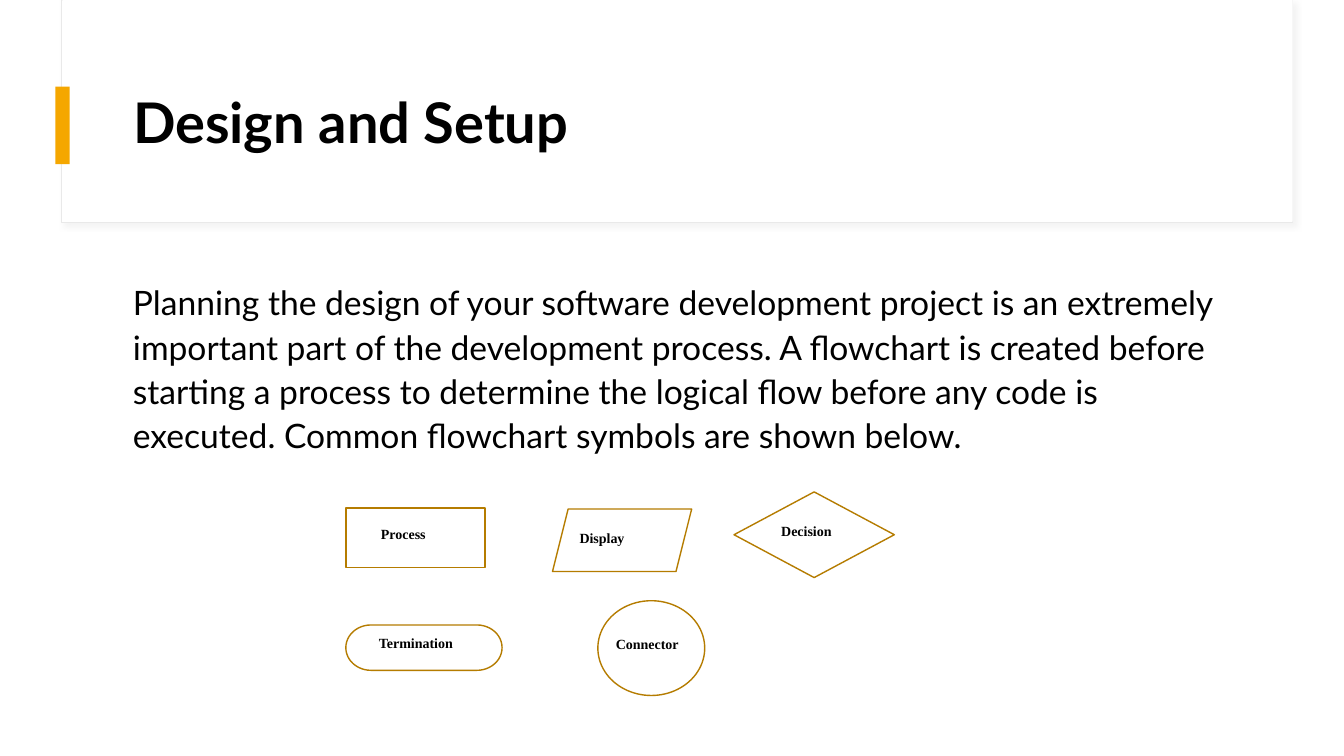
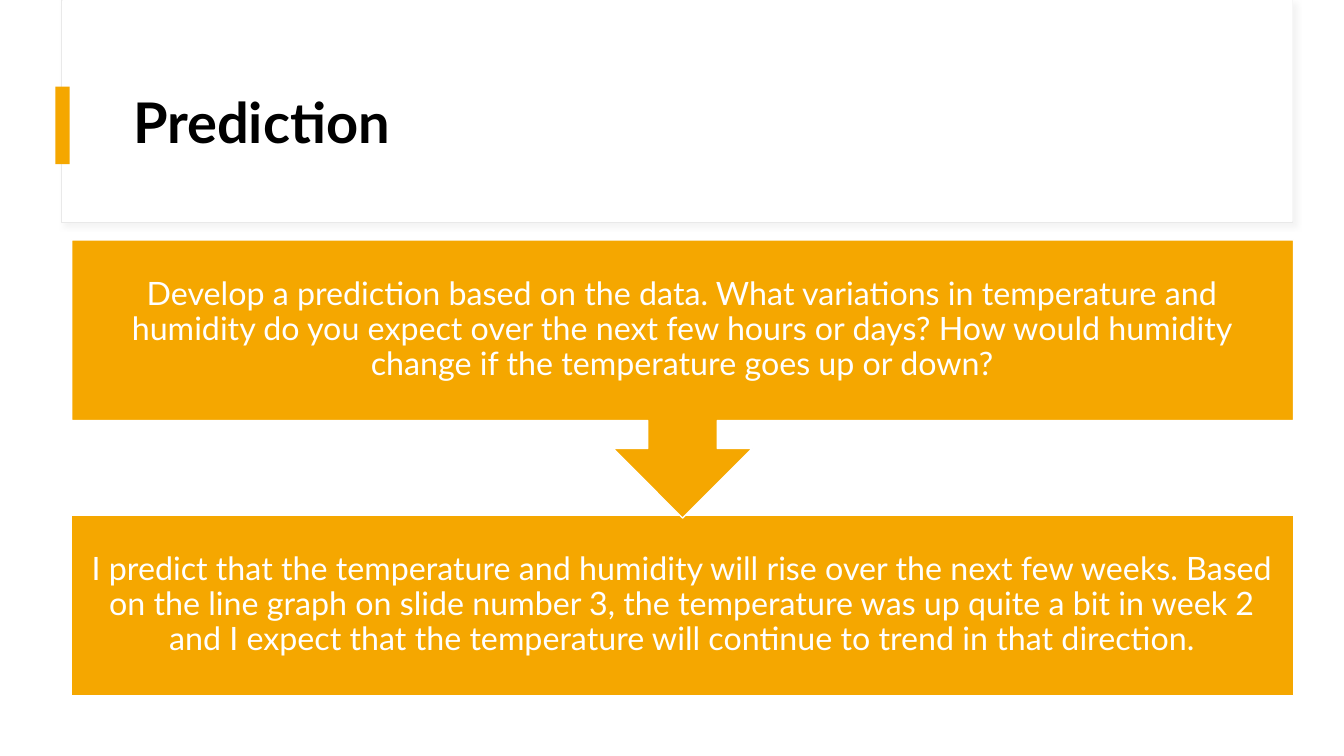
from dataclasses import dataclass

from lxml import etree
from pptx import Presentation
from pptx.dml.color import RGBColor
from pptx.enum.shapes import MSO_SHAPE
from pptx.enum.text import MSO_ANCHOR, PP_ALIGN
from pptx.oxml.ns import qn
from pptx.util import Emu, Inches, Pt

RECT = MSO_SHAPE.RECTANGLE
SLANT = MSO_SHAPE.PARALLELOGRAM
CHOICE = MSO_SHAPE.FLOWCHART_DECISION
END = MSO_SHAPE.FLOWCHART_TERMINATOR
ROUND = MSO_SHAPE.FLOWCHART_CONNECTOR
CALLOUT = MSO_SHAPE.DOWN_ARROW_CALLOUT
LEFT, CENTER = PP_ALIGN.LEFT, PP_ALIGN.CENTER
TOP, MIDDLE = MSO_ANCHOR.TOP, MSO_ANCHOR.MIDDLE


@dataclass(frozen=True)
class Theme:
    """Colours, fonts and type sizes of the deck."""
    gold: str = "F5A700"
    brown: str = "B57C00"
    white: str = "FFFFFF"
    black: str = "000000"
    edge: str = "E9E9E9"
    shade: str = "D9D9D9"
    font: str = "Lato"
    serif: str = "Times New Roman"
    title: int = 40
    body: int = 24
    panel: int = 23
    label: int = 10


THEME = Theme()

SYMBOLS = [
    (RECT, (3.43, 5.04, 1.38, 0.59), "Process", (3.68, 5.16, 0.98, 0.34)),
    (SLANT, (5.48, 5.05, 1.38, 0.62), "Display", (5.65, 5.2, 1.03, 0.4)),
    (CHOICE, (7.28, 4.88, 1.59, 0.85), "Decision", (7.65, 5.13, 0.88, 0.34)),
    (END, (3.43, 6.2, 1.55, 0.45), "Termination", (3.66, 6.25, 1.1, 0.34)),
    (ROUND, (5.93, 5.96, 1.06, 0.94), "Connector", (6.01, 6.26, 0.85, 0.32)),
]


def place(box):
    """Turn a box in inches into lengths."""
    return [Inches(side) for side in box]


def write(shape, text, size, color=THEME.black, font=THEME.font, bold=False,
          align=LEFT, anchor=TOP, space=1.0, inset=None):
    """Put formatted text into a shape."""
    frame = shape.text_frame
    frame.word_wrap = True
    frame.vertical_anchor = anchor
    if inset is not None:
        frame.margin_left = frame.margin_right = Inches(inset)
        frame.margin_top = frame.margin_bottom = Inches(inset)
    para = frame.paragraphs[0]
    para.alignment = align
    para.line_spacing = space
    run = para.add_run()
    run.text = text
    run.font.size = Pt(size)
    run.font.name = font
    run.font.bold = bold
    run.font.color.rgb = RGBColor.from_string(color)


def draw(slide, kind, box, fill=None, line=None, width=1):
    """Add a preset shape with plain fill and line."""
    shape = slide.shapes.add_shape(kind, *place(box))
    shape.shadow.inherit = False
    if fill:
        shape.fill.solid()
        shape.fill.fore_color.rgb = RGBColor.from_string(fill)
    else:
        shape.fill.background()
    if line:
        shape.line.color.rgb = RGBColor.from_string(line)
        shape.line.width = Pt(width)
    else:
        shape.line.fill.background()
    return shape


def note(slide, box, text, size, fill=None, **style):
    """Add a text box."""
    shape = slide.shapes.add_textbox(*place(box))
    if fill:
        shape.fill.solid()
        shape.fill.fore_color.rgb = RGBColor.from_string(fill)
    write(shape, text, size, **style)


def shade(shape):
    """Give a shape a soft shadow to the lower right."""
    effects = shape.element.spPr.find(qn("a:effectLst"))
    outer = etree.SubElement(effects, qn("a:outerShdw"), blurRad=str(Pt(4)),
                             dist=str(Pt(3)), dir="2700000", algn="tl",
                             rotWithShape="0")
    color = etree.SubElement(outer, qn("a:srgbClr"), val=THEME.shade)
    etree.SubElement(color, qn("a:alpha"), val="30000")


def band(slide):
    """Draw the title band and move it to the shared layout."""
    card = draw(slide, RECT, (0.61, 0, 12.21, 2.21), THEME.white, THEME.edge, 0.75)
    shade(card)
    cover = draw(slide, RECT, (0.62, 0, 12.2, 2.2), THEME.white)
    mark = draw(slide, RECT, (0.55, 0.86, 0.14, 0.77), THEME.gold)
    tree = slide.slide_layout.shapes.element
    for spot, shape in enumerate((card, cover, mark), 2):
        tree.insert(spot, shape.element)


def start(deck, text):
    """Add a slide with its title."""
    slide = deck.slides.add_slide(deck.slide_layouts[5])
    title = slide.shapes.title
    title.left, title.top, title.width, title.height = place((1.22, 0.6, 11.12, 1.29))
    write(title, text, THEME.title, bold=True, anchor=MIDDLE, space=0.9)
    return slide


def panel(slide, kind, box, text):
    """Add a gold panel with centred text."""
    shape = draw(slide, kind, box, THEME.gold, THEME.white)
    write(shape, text, THEME.panel, color=THEME.white, align=CENTER,
          anchor=MIDDLE, space=0.9, inset=0.18)


def design(deck):
    """Build the slide on flowchart symbols."""
    slide = start(deck, "Design and Setup")
    band(slide)
    note(slide, (1.22, 2.71, 11.12, 4.04),
         "Planning the design of your software development project is an "
         "extremely important part of the development process. A flowchart is "
         "created before starting a process to determine the logical flow "
         "before any code is executed. Common flowchart symbols are shown below.",
         THEME.body, space=1.1)
    for kind, box, name, spot in SYMBOLS:
        draw(slide, kind, box, line=THEME.brown)
        note(slide, spot, name, THEME.label, fill=THEME.white,
             font=THEME.serif, bold=True)


def predict(deck):
    """Build the slide with the question and its answer."""
    slide = start(deck, "Prediction")
    panel(slide, RECT, (0.71, 5.11, 12.12, 1.79),
          "I predict that the temperature and humidity will rise over the next "
          "few weeks. Based on the line graph on slide number 3, the "
          "temperature was up quite a bit in week 2 and I expect that the "
          "temperature will continue to trend in that direction.")
    panel(slide, CALLOUT, (0.71, 2.38, 12.12, 2.76),
          "Develop a prediction based on the data. What variations in "
          "temperature and humidity do you expect over the next few hours or "
          "days? How would humidity change if the temperature goes up or down?")


def main():
    """Build and save the deck."""
    deck = Presentation()
    deck.slide_width, deck.slide_height = Emu(Inches(13.33)), Inches(7.5)
    design(deck)
    predict(deck)
    deck.save("out.pptx")


if __name__ == "__main__":
    main()
